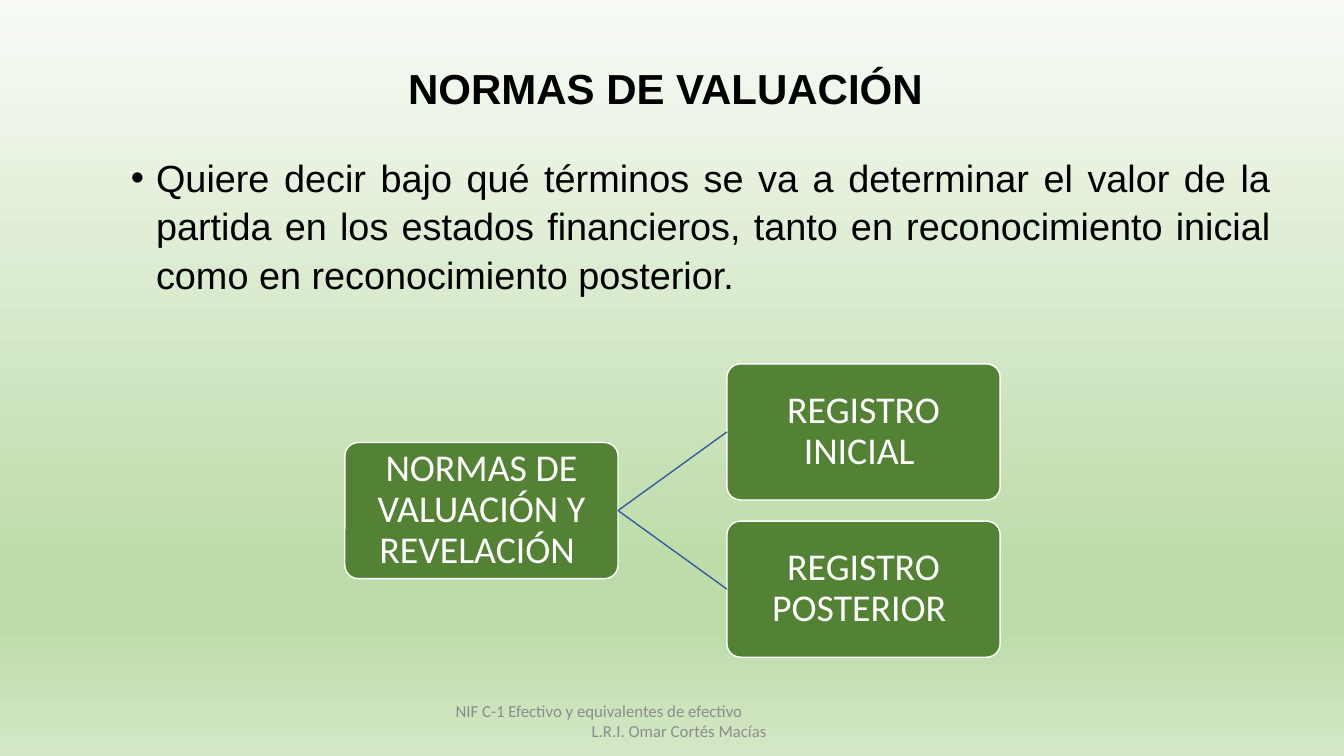
from lxml import etree
from pptx import Presentation, util as u
from pptx.dml.color import RGBColor
from pptx.enum import shapes, text
from pptx.oxml.ns import qn

PX = 9144
SIZE = (1333, 750)
HUES = {"top": "F8FBF6", "mid": "BEDCAA", "low": "D4E8C6", "box": "548235",
        "edge": "365B9D", "white": "FFFFFF", "black": "000000", "gray": "8C8C8C"}
STOPS = [(0, "top"), (74, "mid"), (83, "mid"), (100, "low")]
AL, MID = text.PP_ALIGN, text.MSO_ANCHOR.MIDDLE

TITLE = "NORMAS DE VALUACIÓN "
BODY = ("Quiere decir bajo qué términos se va a determinar el valor de la partida "
        "en los estados financieros, tanto en reconocimiento inicial como en "
        "reconocimiento posterior.")
FOOT = [("NIF C-1 Efectivo y equivalentes de efectivo", 0),
        ("L.R.I. Omar Cortés Macías", 135)]
ROOT = "NORMAS DE VALUACIÓN Y REVELACIÓN "
LEAVES = ["REGISTRO INICIAL ", "REGISTRO POSTERIOR "]

FONTS = {
    "title": {"name": "Arial", "size": u.Pt(30), "bold": True},
    "body": {"name": "Arial", "size": u.Pt(27)},
    "box": {"name": "Calibri", "size": u.Pt(27)},
    "foot": {"name": "Calibri", "size": u.Pt(12)},
}
PARAS = {
    "title": {"alignment": AL.CENTER, "line_spacing": 1.07, "space_after": u.Pt(8)},
    "body": {"alignment": AL.JUSTIFY, "line_spacing": 1.07,
             "space_before": u.Pt(10), "space_after": u.Pt(8)},
    "box": {"alignment": AL.CENTER, "line_spacing": 0.9},
    "foot": {"alignment": AL.LEFT},
}
BOX_W, BOX_H, STEP = 271, 135, 156
ROOT_X, LEAF_X, LEAF_Y = 342, 721, 361


def rgb(hue):
    return RGBColor.from_string(HUES[hue])


def apply(obj, vals):
    for key, val in vals.items():
        setattr(obj, key, val)


def write(para, words, kind, hue):
    apply(para, PARAS[kind])
    run = para.add_run()
    run.text = words
    apply(run.font, FONTS[kind])
    run.font.color.rgb = rgb(hue)


def frame(*at):
    tf = slide.shapes.add_textbox(*[n * PX for n in at]).text_frame
    tf.word_wrap = True
    return tf


def indent(para, left, first=0):
    prop = para._p.get_or_add_pPr()
    prop.set("marL", str(left * PX))
    prop.set("indent", str(first * PX))
    return prop


def box(words, x, y):
    shp = slide.shapes.add_shape(shapes.MSO_SHAPE.ROUNDED_RECTANGLE,
                                 *[n * PX for n in (x, y, BOX_W, BOX_H)])
    shp.adjustments[0] = 0.1
    shp.shadow.inherit = False
    shp.fill.solid()
    shp.fill.fore_color.rgb = rgb("box")
    shp.line.color.rgb = rgb("white")
    shp.line.width = u.Pt(1)
    tf = shp.text_frame
    apply(tf, {"word_wrap": True, "vertical_anchor": MID})
    for side in ("left", "right", "top", "bottom"):
        setattr(tf, "margin_" + side, 2 * PX)
    write(tf.paragraphs[0], words, "box", "white")
    return shp


def join(start, end):
    line = slide.shapes.add_connector(shapes.MSO_CONNECTOR.STRAIGHT, 0, 0, 0, 0)
    line.begin_connect(start, 3)
    line.end_connect(end, 1)
    line.line.color.rgb = rgb("edge")
    line.line.width = u.Pt(1)
    etree.SubElement(line._element.spPr, qn("a:effectLst"))


def paint():
    fill = slide.background.fill
    fill.gradient()
    fill.gradient_angle = 270
    stops = slide._element.find(".//" + qn("a:gsLst"))
    for old in list(stops):
        stops.remove(old)
    for pos, hue in STOPS:
        stop = etree.SubElement(stops, qn("a:gs"), pos=str(pos * 1000))
        etree.SubElement(stop, qn("a:srgbClr"), val=HUES[hue])


prs = Presentation()
prs.slide_width, prs.slide_height = [n * PX for n in SIZE]
slide = prs.slides.add_slide(prs.slide_layouts[6])
paint()

write(frame(333, 54, 666, 61).paragraphs[0], TITLE, "title", "black")

para = frame(120, 145, 1150, 187).paragraphs[0]
write(para, BODY, "body", "black")
prop = indent(para, 25, -25)
etree.SubElement(prop, qn("a:buFont"), typeface="Arial")
etree.SubElement(prop, qn("a:buChar"), char="•")

root = box(ROOT, ROOT_X, LEAF_Y + STEP // 2)
for i, words in enumerate(LEAVES):
    join(root, box(words, LEAF_X, LEAF_Y + i * STEP))

tf = frame(442, 695, 450, 40)
tf.vertical_anchor = MID
for i, (words, left) in enumerate(FOOT):
    para = tf.add_paragraph() if i else tf.paragraphs[0]
    write(para, words, "foot", "gray")
    indent(para, left)

prs.save("out.pptx")
